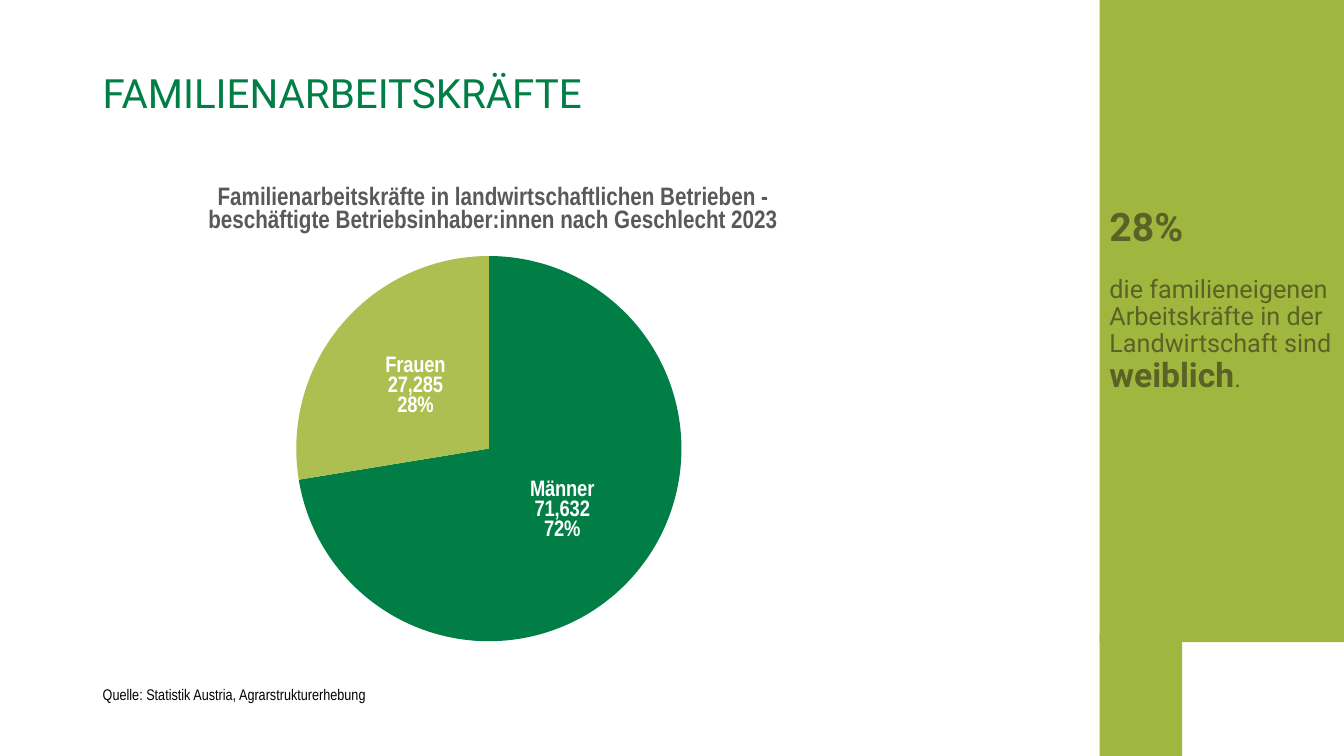
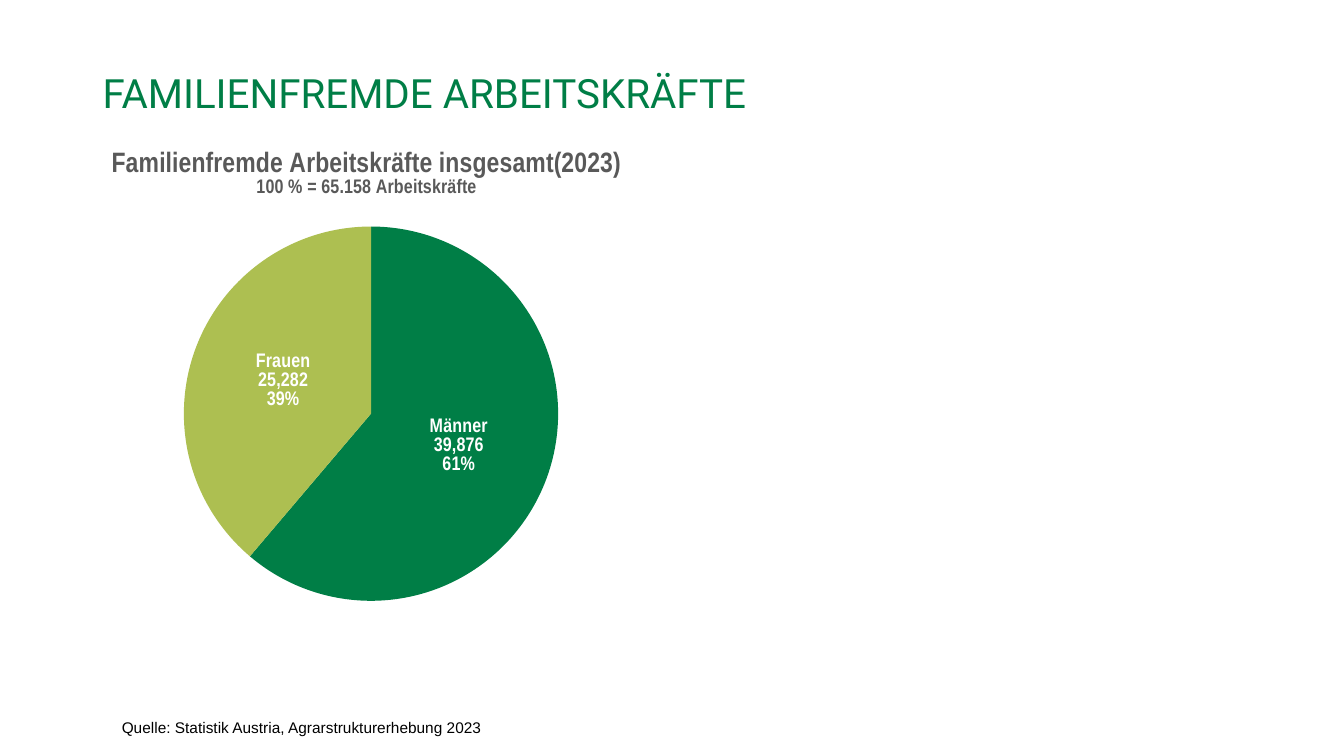
"""Build two slides on farm labour by gender, each with a pie chart."""
import pptx
import pptx.chart.data
import pptx.dml.color
import pptx.enum.chart
import pptx.enum.shapes
import pptx.enum.text
import pptx.oxml
import pptx.oxml.ns
import pptx.util

Cm = pptx.util.Cm
Pt = pptx.util.Pt
qn = pptx.oxml.ns.qn
MIDDLE = pptx.enum.text.MSO_ANCHOR.MIDDLE

COLORS = {
    "green": "007E46",
    "light": "ADBF51",
    "band": "A1B63F",
    "olive": "596325",
    "gray": "595959",
    "white": "FFFFFF",
    "black": "000000",
}
HEAD = "Roboto"
BODY = "Arial"
NARROW = "Arial Narrow"


def color(name):
    return pptx.dml.color.RGBColor.from_string(COLORS[name])


def style(font, face, size, hue, bold=False):
    font.name = face
    font.size = Pt(size)
    font.bold = bold
    font.color.rgb = color(hue)


def add_text(slide, box, text, face, size, hue, wrap=True):
    shape = slide.shapes.add_textbox(*map(Cm, box))
    frame = shape.text_frame
    frame.word_wrap = wrap
    frame.text = text
    style(frame.paragraphs[0].runs[0].font, face, size, hue)
    return frame


def add_title(slide, text):
    frame = add_text(slide, (2.34, 1.83, 25.37, 1.24), text, HEAD, 28.8, "green")
    frame.vertical_anchor = MIDDLE
    frame.paragraphs[0].line_spacing = 0.8


def add_source(slide, box, text, face):
    add_text(slide, box, text, face, 11, "black", wrap=False)


def add_band(slide, box):
    kind = pptx.enum.shapes.MSO_SHAPE.RECTANGLE
    band = slide.shapes.add_shape(kind, *map(Cm, box))
    band.shadow.inherit = False
    band.fill.solid()
    band.fill.fore_color.rgb = color("band")
    band.line.fill.background()
    return band


def fill_band(band, lines):
    frame = band.text_frame
    frame.word_wrap = True
    frame.vertical_anchor = MIDDLE
    frame.margin_right = Cm(0.1)
    frame.margin_bottom = Cm(1.14)
    for i, parts in enumerate(lines):
        para = frame.paragraphs[0] if i == 0 else frame.add_paragraph()
        para.alignment = pptx.enum.text.PP_ALIGN.LEFT
        para.line_spacing = 0.9
        if i:
            para.space_before = Pt(19)
        for text, size, bold in parts:
            run = para.add_run()
            run.text = text
            style(run.font, HEAD, size, "olive", bold)


def set_place(node, **spots):
    place = node.find(qn("c:layout"))
    if place is None:
        place = node.makeelement(qn("c:layout"), {})
        node.insert(0, place)
    hand = pptx.oxml.ns.qn("c:manualLayout")
    hand = place.makeelement(hand, {})
    place.append(hand)
    for tag, val in spots.items():
        hand.append(hand.makeelement(qn("c:" + tag), {"val": str(val)}))


def add_pie(slide, box, counts, lines, spot, size):
    data = pptx.chart.data.CategoryChartData(number_format="#,##0")
    data.categories = ["Männer", "Frauen"]
    data.add_series("Series 1", counts)
    kind = pptx.enum.chart.XL_CHART_TYPE.PIE
    chart = slide.shapes.add_chart(kind, *map(Cm, box), data).chart
    chart.has_legend = False
    style(chart.font, BODY, 10, "black")

    chart.has_title = True
    title = chart.chart_title
    frame = title.text_frame
    frame.text = "\n".join(text for text, _ in lines)
    for para, (_, points) in zip(frame.paragraphs, lines):
        style(para.runs[0].font, NARROW, points, "gray", True)
    left, top = spot
    set_place(title._element, xMode="edge", yMode="edge", x=left, y=top)
    area = chart._chartSpace.find(".//" + qn("c:plotArea"))
    set_place(area, layoutTarget="inner", xMode="edge", yMode="edge",
              x=0.3, y=0.18, w=0.4, h=0.79)

    series = chart.plots[0].series[0]
    for i, hue in enumerate(("green", "light")):
        slice = series.points[i].format
        slice.fill.solid()
        slice.fill.fore_color.rgb = color(hue)
        slice.line.fill.background()
    add_labels(series.data_labels, size)


def add_labels(labels, size):
    labels.show_value = True
    labels.show_percentage = True
    labels.show_category_name = True
    labels.number_format = "0%"
    labels.number_format_is_linked = False
    labels.position = pptx.enum.chart.XL_LABEL_POSITION.CENTER
    style(labels.font, NARROW, size, "white", True)
    last = labels._element.find(qn("c:showBubbleSize"))
    split = last.makeelement(qn("c:separator"), {})
    split.text = "\n"
    last.addnext(split)


def main():
    deck = pptx.Presentation()
    deck.slide_width = Cm(33.87)
    deck.slide_height = Cm(19.05)
    blank = deck.slide_layouts[6]

    slide = deck.slides.add_slide(blank)
    add_title(slide, "FAMILIENARBEITSKRÄFTE")
    band = add_band(slide, (27.71, 0, 6.16, 16.18))
    fill_band(band, [
        [("28%", 28, True)],
        [("die familieneigenen Arbeitskräfte in der Landwirtschaft sind ", 18, False),
         ("weiblich", 24, True), (".", 18, False)],
    ])
    add_band(slide, (27.71, 15.98, 2.08, 3.07))
    add_pie(slide, (0, 4.24, 24.64, 12.29), (71632, 27285), [
        ("Familienarbeitskräfte in landwirtschaftlichen Betrieben -", 18),
        ("beschäftigte Betriebsinhaber:innen nach Geschlecht 2023", 18),
    ], (0.21, 0.03), 16)
    add_source(slide, (2.34, 17.15, 7.29, 0.74),
               "Quelle: Statistik Austria, Agrarstrukturerhebung", NARROW)

    slide = deck.slides.add_slide(blank)
    add_pie(slide, (-2.46, 3.56, 23.62, 11.94), (39876, 25282), [
        ("Familienfremde Arbeitskräfte insgesamt(2023)", 20),
        ("100 % = 65.158 Arbeitskräfte", 14),
    ], (0.22, 0.01), 14)
    add_source(slide, (2.82, 17.98, 10.11, 0.74),
               "Quelle: Statistik Austria, Agrarstrukturerhebung 2023", BODY)
    add_title(slide, "FAMILIENFREMDE ARBEITSKRÄFTE")

    deck.save("out.pptx")


if __name__ == "__main__":
    main()
